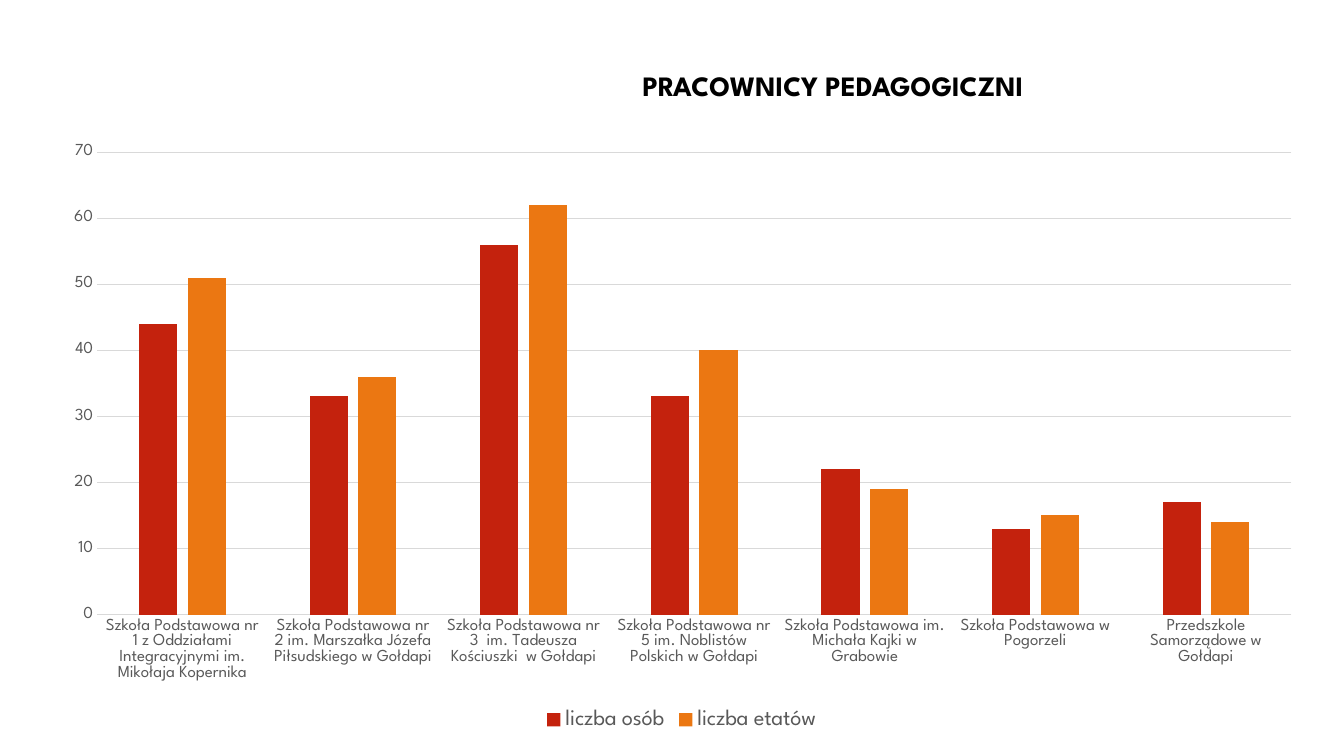
from pptx import Presentation
from pptx.chart.data import CategoryChartData
from pptx.dml.color import RGBColor
from pptx.enum.chart import XL_CHART_TYPE, XL_LEGEND_POSITION, XL_TICK_MARK
from pptx.enum.text import MSO_ANCHOR, PP_ALIGN
from pptx.oxml import parse_xml
from pptx.oxml.ns import nsdecls, qn
from pptx.util import Inches, Pt

COLUMNS = XL_CHART_TYPE.COLUMN_CLUSTERED
BOTTOM = XL_LEGEND_POSITION.BOTTOM
NO_TICK = XL_TICK_MARK.NONE
MIDDLE = MSO_ANCHOR.MIDDLE
RIGHT = PP_ALIGN.RIGHT

BLACK = RGBColor(0x00, 0x00, 0x00)
WHITE = RGBColor(0xFF, 0xFF, 0xFF)
GREY = RGBColor(0x59, 0x59, 0x59)
GRID = RGBColor(0xD9, 0xD9, 0xD9)
RED = RGBColor(0xC4, 0x22, 0x0D)
ORANGE = RGBColor(0xEB, 0x77, 0x12)

SCHOOLS = [
    "Szkoła Podstawowa nr 1 z Oddziałami Integracyjnymi im. Mikołaja Kopernika",
    "Szkoła Podstawowa nr 2 im. Marszałka Józefa Piłsudskiego w Gołdapi",
    "Szkoła Podstawowa nr 3  im. Tadeusza Kościuszki  w Gołdapi",
    "Szkoła Podstawowa nr 5 im. Noblistów Polskich w Gołdapi",
    "Szkoła Podstawowa im. Michała Kajki w Grabowie",
    "Szkoła Podstawowa w Pogorzeli",
    "Przedszkole Samorządowe w Gołdapi",
]
STAFF = [
    ("liczba osób", [44, 33, 56, 33, 22, 13, 17], RED),
    ("liczba etatów", [51, 36, 62, 40, 19, 15, 14], ORANGE),
]


def format_font(font, size, color, name, bold=False):
    font.size, font.name, font.bold = Pt(size), name, bold
    font.color.rgb = color


def write_text(tf, text, align=None, spacing=None, **fmt):
    p = tf.paragraphs[0]
    p.alignment, p.line_spacing = align, spacing
    r = p.add_run()
    r.text = text
    format_font(r.font, **fmt)


class StaffSlide:
    font = "League Spartan"

    def __init__(self, prs):
        self.s = prs.slides.add_slide(prs.slide_layouts[5])
        fill = self.s.background.fill
        fill.solid()
        fill.fore_color.rgb = WHITE

    def title(self, text, left, top, width, height):
        sp = self.s.shapes.title
        sp.left, sp.top = Inches(left), Inches(top)
        sp.width, sp.height = Inches(width), Inches(height)
        tf = sp.text_frame
        tf.word_wrap = True
        tf.vertical_anchor = MIDDLE
        write_text(tf, text, align=RIGHT, spacing=0.9,
                   size=20, color=BLACK, name=self.font, bold=True)

    def column_chart(self, categories, series, left, top, width, height):
        data = CategoryChartData()
        data.categories = categories
        for name, values, _ in series:
            data.add_series(name, values)
        chart = self.s.shapes.add_chart(
            COLUMNS, Inches(left), Inches(top), Inches(width), Inches(height), data).chart
        chart.has_title = False
        format_font(chart.font, 10, BLACK, self.font)

        # Columns
        plot = chart.plots[0]
        plot.gap_width, plot.overlap = 219, -27
        plot.vary_by_categories = False
        for columns, (_, _, color) in zip(plot.series, series):
            columns.format.fill.solid()
            columns.format.fill.fore_color.rgb = color

        # Axes and grid
        for axis in (chart.category_axis, chart.value_axis):
            axis.major_tick_mark = axis.minor_tick_mark = NO_TICK
            format_font(axis.tick_labels.font, 12, GREY, self.font)
        values = chart.value_axis
        values.minimum_scale, values.maximum_scale, values.major_unit = 0, 70, 10
        values.format.line.fill.background()
        values.has_major_gridlines = True
        for line in (chart.category_axis.format.line, values.major_gridlines.format.line):
            line.color.rgb = GRID
            line.width = Pt(0.75)

        # Legend
        chart.has_legend = True
        chart.legend.position = BOTTOM
        chart.legend.include_in_layout = False
        format_font(chart.legend.font, 16, GREY, self.font)
        return chart

    def place_plot(self, chart, x, y, w, h):
        """Set the inner plot area as fractions of the chart."""
        area = chart.plots[0]._element.getparent()
        for old in area.findall(qn("c:layout")):
            area.remove(old)
        sizes = "".join(f'<c:{k} val="{v}"/>' for k, v in zip("xywh", (x, y, w, h)))
        area.insert(0, parse_xml(
            f'<c:layout {nsdecls("c")}><c:manualLayout><c:layoutTarget val="inner"/>'
            f'<c:xMode val="edge"/><c:yMode val="edge"/>{sizes}'
            '</c:manualLayout></c:layout>'))


def main():
    prs = Presentation()
    prs.slide_width, prs.slide_height = Inches(13.33), Inches(7.5)
    slide = StaffSlide(prs)
    slide.title("PRACOWNICY PEDAGOGICZNI", 5.4, 0.52, 4.85, 0.69)
    chart = slide.column_chart(SCHOOLS, STAFF, 0.46, 1.33, 12.6, 5.96)
    slide.place_plot(chart, 0.04, 0.03, 0.94, 0.77)
    prs.save("out.pptx")


if __name__ == "__main__":
    main()
